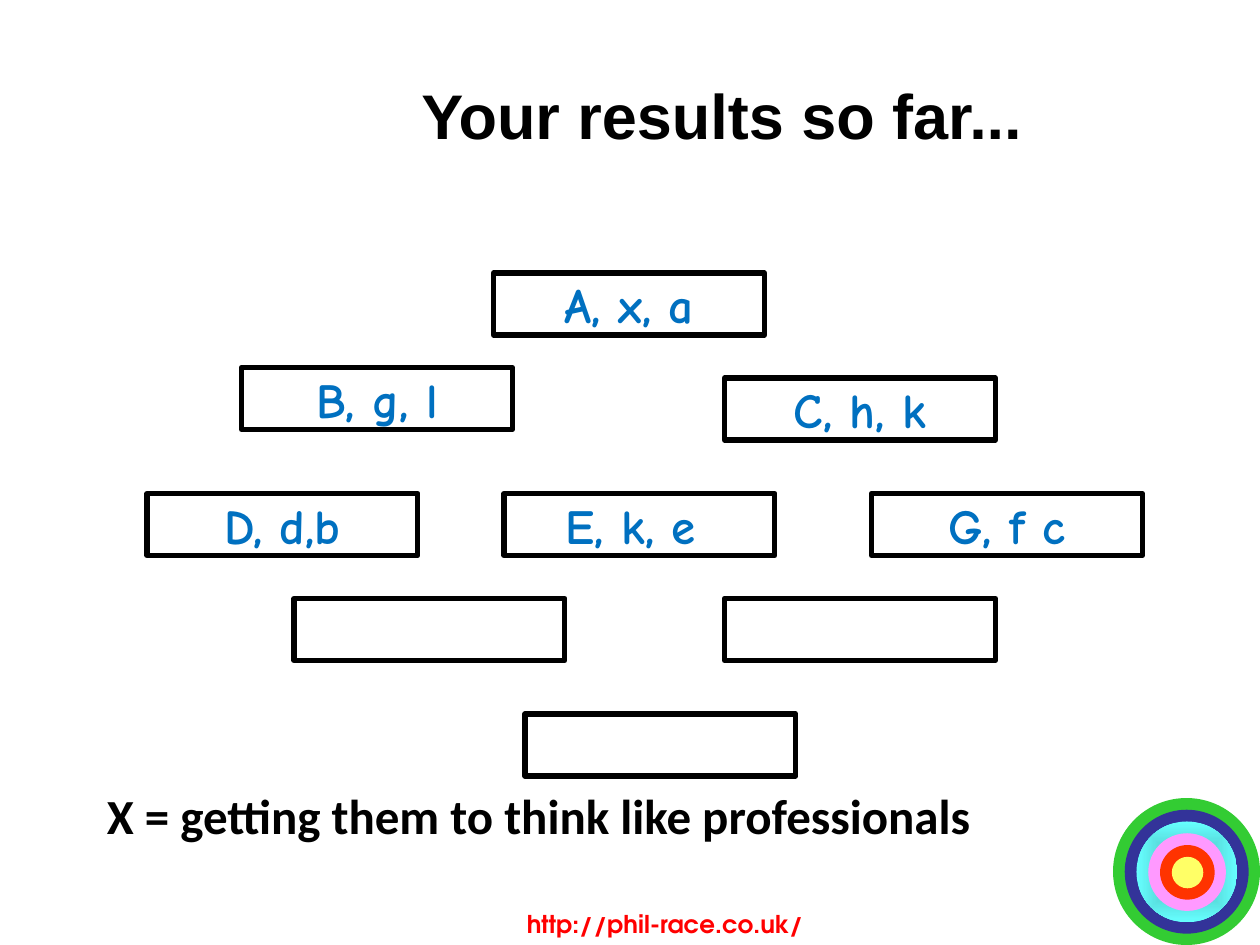
from dataclasses import dataclass

from lxml.etree import SubElement
from pptx import Presentation
from pptx.dml.color import RGBColor
from pptx.enum.shapes import MSO_SHAPE as Preset
from pptx.enum.text import MSO_ANCHOR as Anchor, MSO_AUTO_SIZE as AutoSize, PP_ALIGN as Align
from pptx.oxml.ns import qn
from pptx.util import Inches, Pt

COLUMNS = 120
ROWS = 90
SLIDE_WIDTH = Inches(10)
SLIDE_HEIGHT = Inches(7.5)
BOX_WIDTH, BOX_HEIGHT = 25.8, 5.9
RING_LEFT, RING_TOP, RING_SIZE = 106, 76, 14
RING_STEP, RING_SHRINK = 1.12, 2.2

BLACK = RGBColor(0x00, 0x00, 0x00)
WHITE = RGBColor(0xFF, 0xFF, 0xFF)
BLUE = RGBColor(0x00, 0x70, 0xC0)
RED = RGBColor(0xFF, 0x00, 0x00)
GREEN = RGBColor(0x33, 0xCC, 0x33)
INDIGO = RGBColor(0x33, 0x33, 0x99)
TEAL = RGBColor(0x47, 0xB2, 0xB2)
CYAN = RGBColor(0x66, 0xFF, 0xFF)
PINK = RGBColor(0xFF, 0x99, 0xFF)
ORANGE = RGBColor(0xFF, 0x33, 0x00)
YELLOW = RGBColor(0xFF, 0xFF, 0x66)


@dataclass(frozen=True)
class Area:
    column: float
    row: float
    columns: float
    rows: float

    def lengths(self) -> tuple[int, int, int, int]:
        return (
            round(SLIDE_WIDTH * self.column / COLUMNS),
            round(SLIDE_HEIGHT * self.row / ROWS),
            round(SLIDE_WIDTH * self.columns / COLUMNS),
            round(SLIDE_HEIGHT * self.rows / ROWS),
        )


@dataclass(frozen=True)
class TextStyle:
    name: str
    size: int
    color: RGBColor
    alignment: Align = Align.CENTER
    line_spacing: float | None = None


@dataclass(frozen=True)
class ResultBox:
    column: float
    row: float
    text: str = ""
    fill: RGBColor | None = None


@dataclass(frozen=True)
class Label:
    area: Area
    text: str
    style: TextStyle
    frame: dict


TITLE_STYLE = TextStyle("Arial", 36, BLACK, line_spacing=0.75)
RESULT_STYLE = TextStyle("Comic Neue", 28, BLUE)
ADDRESS_STYLE = TextStyle("TeX Gyre Adventor", 14, RED)
NOTE_STYLE = TextStyle("Calibri", 28, BLACK, Align.LEFT)

RING_COLORS = [GREEN, INDIGO, (TEAL, CYAN), PINK, ORANGE, YELLOW]

RESULTS = [
    ResultBox(47, 26, "A, x, a"),
    ResultBox(23, 35, "B, g, l"),
    ResultBox(69, 36, "C, h, k"),
    ResultBox(48, 47, "E, k, e "),
    ResultBox(83, 47, "G, f c"),
    ResultBox(14, 47, "D, d,b"),
    ResultBox(69, 57),
    ResultBox(50, 68),
    ResultBox(28, 57, fill=WHITE),
]

LABELS = [
    Label(Area(46, 86, 34.7, 4), "http://phil-race.co.uk/", ADDRESS_STYLE,
          {"word_wrap": True, "auto_size": AutoSize.SHAPE_TO_FIT_TEXT}),
    Label(Area(17.5, 4.5, 102.5, 14.25), "Your results so far...", TITLE_STYLE,
          {"word_wrap": True, "vertical_anchor": Anchor.MIDDLE}),
    Label(Area(9, 74.25, 86.9, 6.85), "X = getting them to think like professionals", NOTE_STYLE,
          {"word_wrap": False, "auto_size": AutoSize.SHAPE_TO_FIT_TEXT}),
]


def apply(target, values: dict) -> None:
    for name, value in values.items():
        setattr(target, name, value)


def write(shape, text: str, style: TextStyle, frame: dict) -> None:
    apply(shape.text_frame, frame)
    paragraph = shape.text_frame.paragraphs[0]
    apply(paragraph, {"alignment": style.alignment, "line_spacing": style.line_spacing})
    run = paragraph.add_run()
    run.text = text
    apply(run.font, {"name": style.name, "size": Pt(style.size), "bold": True})
    run.font.color.rgb = style.color


def paint(shape, color: RGBColor | None) -> None:
    if color is None:
        shape.fill.background()
    else:
        shape.fill.solid()
        shape.fill.fore_color.rgb = color


def paint_radial(shape, colors: tuple[RGBColor, RGBColor]) -> None:
    shape.fill.gradient()
    for stop, color in zip(shape.fill.gradient_stops, colors):
        stop.color.rgb = color
    gradient = shape.element.spPr.find(qn("a:gradFill"))
    gradient.remove(gradient.find(qn("a:lin")))
    radial = SubElement(gradient, qn("a:path"))
    radial.set("path", "shape")
    center = SubElement(radial, qn("a:fillToRect"))
    for side in "ltrb":
        center.set(side, "50000")


def add_shape(slide, preset: Preset, area: Area):
    shape = slide.shapes.add_shape(preset, *area.lengths())
    shape.shadow.inherit = False
    return shape


def draw_ring(slide, index: int, color: RGBColor | tuple[RGBColor, RGBColor]) -> None:
    offset = index * RING_STEP
    size = RING_SIZE - index * RING_SHRINK
    shape = add_shape(slide, Preset.OVAL, Area(RING_LEFT + offset, RING_TOP + offset, size, size))
    shape.line.fill.background()
    if isinstance(color, RGBColor):
        paint(shape, color)
    else:
        paint_radial(shape, color)


def draw_label(slide, label: Label) -> None:
    shape = slide.shapes.add_textbox(*label.area.lengths())
    write(shape, label.text, label.style, label.frame)


def draw_result(slide, box: ResultBox) -> None:
    shape = add_shape(slide, Preset.RECTANGLE, Area(box.column, box.row, BOX_WIDTH, BOX_HEIGHT))
    paint(shape, box.fill)
    shape.line.color.rgb = BLACK
    shape.line.width = Pt(3)
    if box.text:
        write(shape, box.text, RESULT_STYLE, {"word_wrap": False, "vertical_anchor": Anchor.MIDDLE})


def main() -> None:
    presentation = Presentation()
    apply(presentation, {"slide_width": SLIDE_WIDTH, "slide_height": SLIDE_HEIGHT})
    slide = presentation.slides.add_slide(presentation.slide_layouts[6])
    for index, color in enumerate(RING_COLORS):
        draw_ring(slide, index, color)
    for box in RESULTS:
        draw_result(slide, box)
    for label in LABELS:
        draw_label(slide, label)
    presentation.save("out.pptx")


if __name__ == "__main__":
    main()
